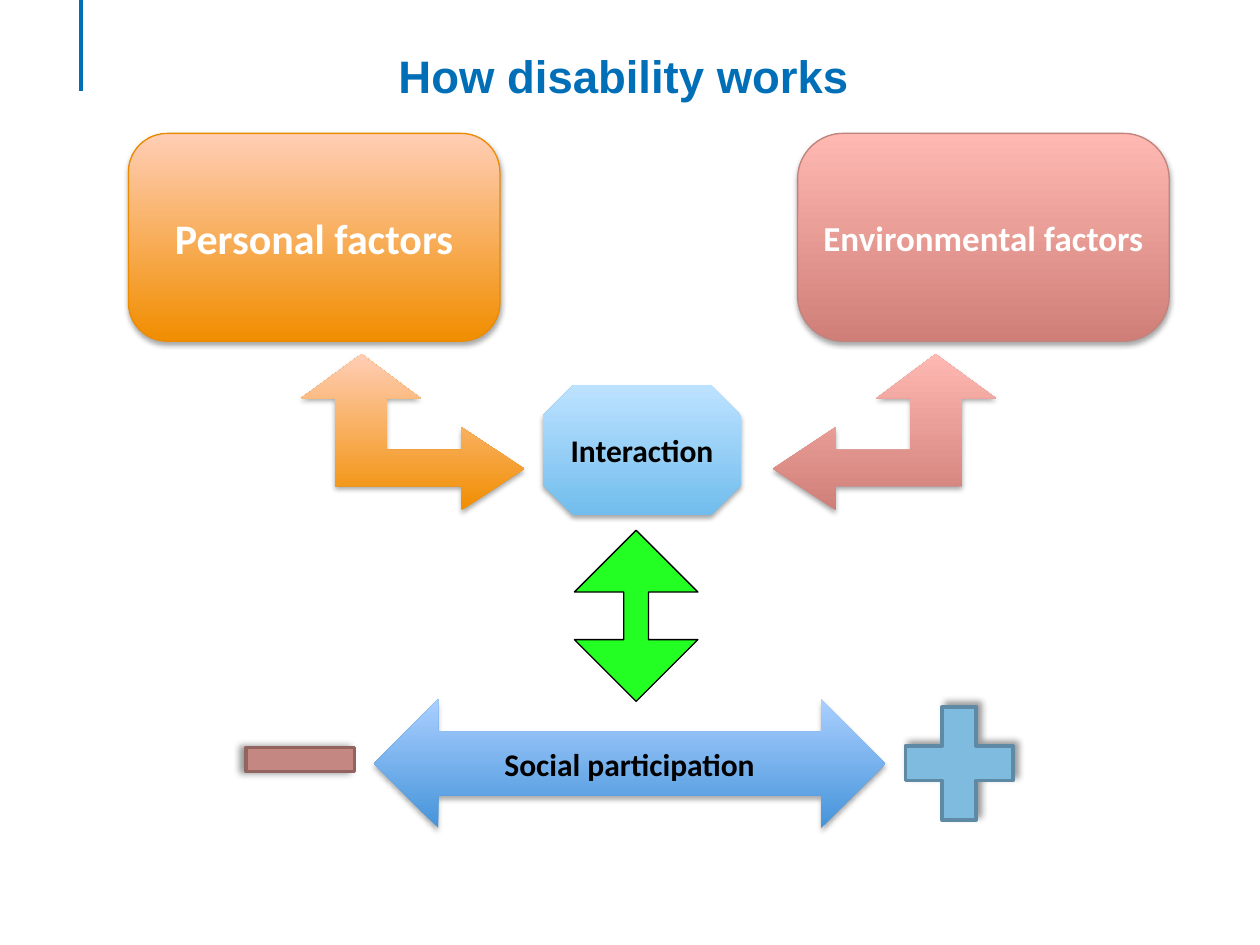
import pptx
import pptx.util
import pptx.dml.color
import pptx.enum.shapes
import pptx.enum.text
import lxml.etree

Cm = pptx.util.Cm
Pt = pptx.util.Pt
KIND = pptx.enum.shapes.MSO_SHAPE
ALIGN = pptx.enum.text.PP_ALIGN
ANCHOR = pptx.enum.text.MSO_ANCHOR
RGB = pptx.dml.color.RGBColor.from_string
NS = "http://schemas.openxmlformats.org/drawingml/2006/main"


def paint(shape, fills, edge, width, shade):
    if len(fills) == 2:
        shape.fill.gradient()
        shape.fill.gradient_angle = 90
        for stop, hue in zip(shape.fill.gradient_stops, fills):
            stop.color.rgb = RGB(hue)
    else:
        shape.fill.solid()
        shape.fill.fore_color.rgb = RGB(fills[0])
    if edge:
        shape.line.color.rgb = RGB(edge)
        shape.line.width = Pt(width)
    else:
        shape.line.fill.background()
    shape.shadow.inherit = False
    if shade:
        alpha, blur, dist, angle = shade
        effects = shape.element.spPr.find(f"{{{NS}}}effectLst")
        outer = lxml.etree.SubElement(
            effects, f"{{{NS}}}outerShdw", blurRad=str(Pt(blur)),
            dist=str(Pt(dist)), dir=str(angle * 60000), rotWithShape="0")
        color = lxml.etree.SubElement(outer, f"{{{NS}}}srgbClr", val="000000")
        lxml.etree.SubElement(color, f"{{{NS}}}alpha", val=str(alpha * 1000))


def write(frame, text, font, size, hue):
    para = frame.paragraphs[0]
    para.alignment = ALIGN.CENTER
    run = para.add_run()
    run.text = text
    run.font.name = font
    run.font.size = Pt(size)
    run.font.bold = True
    run.font.color.rgb = RGB(hue)


deck = pptx.Presentation()
deck.slide_width = Cm(25.4)
deck.slide_height = Cm(19.05)
slide = deck.slides.add_slide(deck.slide_layouts[5])
shapes = slide.shapes

rule = shapes.add_connector(
    pptx.enum.shapes.MSO_CONNECTOR.STRAIGHT, Cm(1.63), Cm(0), Cm(1.63), Cm(1.83))
rule.line.color.rgb = RGB("006FB7")
rule.line.width = Pt(2)
lxml.etree.SubElement(rule.element.spPr, f"{{{NS}}}effectLst")

title = shapes.title
title.left, title.top, title.width, title.height = Cm(0.84), Cm(0.76), Cm(23.47), Cm(1.93)
title.text_frame.auto_size = pptx.enum.text.MSO_AUTO_SIZE.NONE
title.text_frame.vertical_anchor = ANCHOR.TOP
title.text_frame.margin_top = Cm(0.2)
write(title.text_frame, "How disability works", "Arial", 26, "006FB7")

orange = ["F18E00", "FFCEB6"]
red = ["CF7F77", "FFB8B2"]
sky = ["71BDED", "BDE2FF"]
blue = ["4594DA", "AACFFF"]
soft = (35, 3.1, 1.8, 90)

parts = [
    (KIND.ROUNDED_RECTANGLE, (16.08, 2.69, 7.49, 4.19), [0.219], red, "C2837C", 0.75, soft,
     ("Environmental factors", 20, "FFFFFF", True)),
    (KIND.ROUNDED_RECTANGLE, (2.59, 2.69, 7.49, 4.19), [0.186], orange, "EC8B00", 0.75, soft,
     ("Personal factors", 24, "FFFFFF", True)),
    (KIND.OCTAGON, (10.95, 7.77, 3.99, 2.62), [0.231], sky, None, 0, soft,
     ("Interaction", 18, "000000", False)),
    (KIND.UP_DOWN_ARROW, (11.58, 10.69, 2.49, 3.45), [0.5, 0.199], ["23FF23"], "000000", 0.75,
     None, None),
    (KIND.LEFT_RIGHT_ARROW, (7.54, 14.1, 10.31, 2.59), [], blue, None, 0, soft,
     ("Social participation", 18, "000000", False)),
    (KIND.MATH_MINUS, (4.57, 14.27, 2.97, 2.08), [], ["C58781"], "92645F", 2,
     (40, 4, 3, 180), None),
    (KIND.MATH_PLUS, (17.86, 13.84, 2.95, 3.1), [], ["7FBADF"], "5E8AA5", 2,
     (40, 4, 3, 315), None),
]
for kind, place, adjust, fills, edge, width, shade, label in parts:
    shape = shapes.add_shape(kind, *[Cm(size) for size in place])
    for spot, value in enumerate(adjust):
        shape.adjustments[spot] = value
    paint(shape, fills, edge, width, shade)
    if label:
        text, size, hue, wrap = label
        shape.text_frame.word_wrap = wrap
        shape.text_frame.vertical_anchor = ANCHOR.MIDDLE
        write(shape.text_frame, text, "Calibri", size, hue)

bend = [(7.29, 7.14), (8.48, 8.03), (7.8, 8.03), (7.8, 9.07), (9.3, 9.07), (9.3, 8.61),
        (10.57, 9.45), (9.3, 10.29), (9.3, 9.8), (6.76, 9.8), (6.76, 8.03), (6.07, 8.03)]
mirror = [(26.15 - x, y) for x, y in bend]
for points, fills in [(bend, orange), (mirror, red)]:
    spots = [(Cm(x), Cm(y)) for x, y in points]
    pen = shapes.build_freeform(*spots[0])
    pen.add_line_segments(spots[1:], close=True)
    paint(pen.convert_to_shape(), fills, None, 0, soft)

deck.save("out.pptx")
